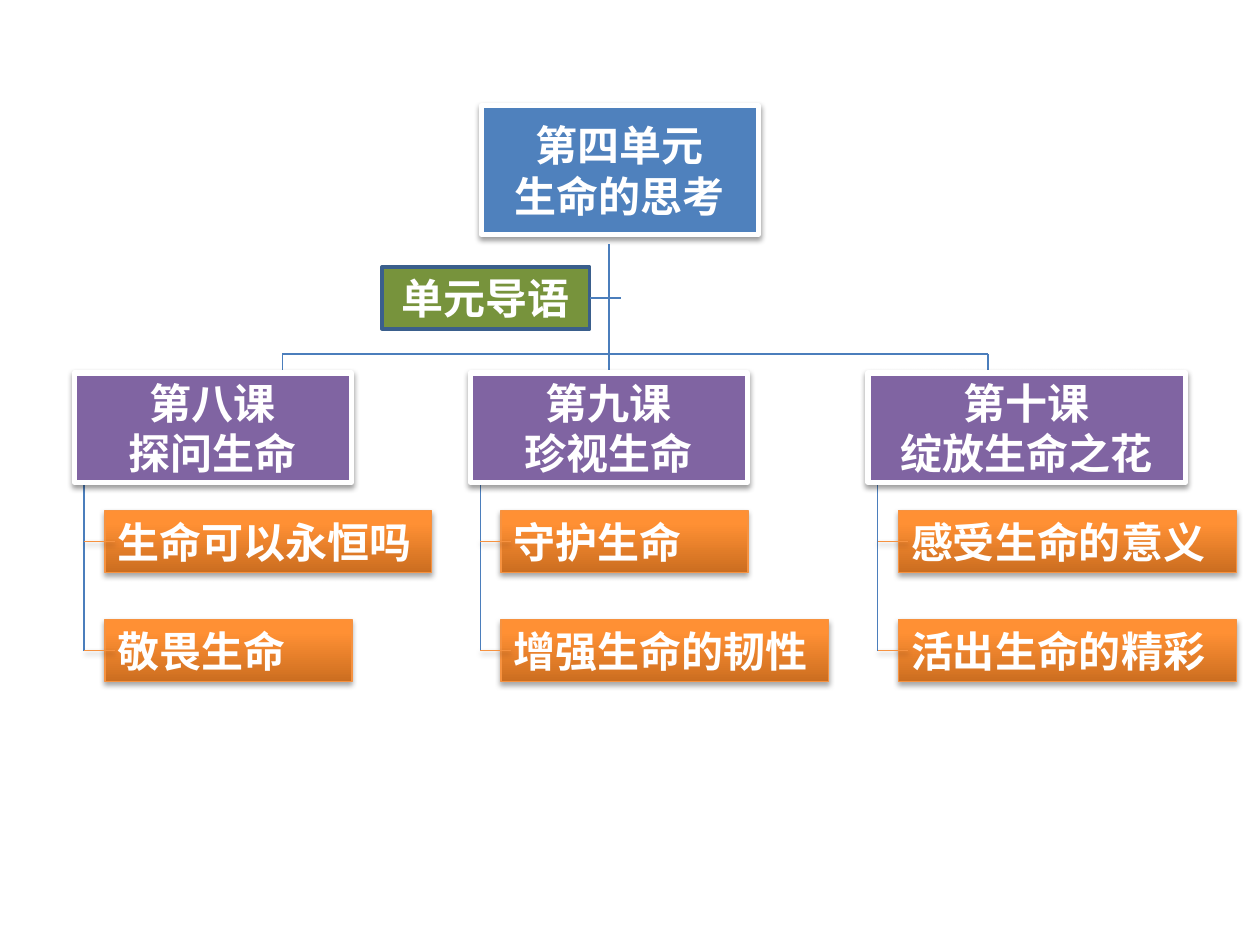
from copy import deepcopy

from lxml.etree import SubElement
from pptx import Presentation
from pptx.dml.color import RGBColor
from pptx.enum.shapes import MSO_CONNECTOR, MSO_SHAPE
from pptx.enum.text import MSO_ANCHOR, PP_ALIGN
from pptx.oxml.ns import qn
from pptx.util import Pt

COLORS = {
    "unit": "4F81BD", "lesson": "8064A2", "intro": "77933C", "intro_edge": "3A5F8C",
    "branch": "4B7EBC", "topic_edge": "F69240", "white": "FFFFFF", "shadow": "000000",
    "topic_low": "CC6E20", "topic_mid": "FF9034", "topic_high": "FF9136",
}
TOPIC_STOPS = [("topic_low", 0), ("topic_mid", 0.8), ("topic_high", 1)]
CARD_SHADOW = (1.6, 38)
TOPIC_SHADOW = (1.8, 35)
LESSONS = [
    (42.5, 158.4, ["第八课", "探问生命"], [("生命可以永恒吗", 186.5), ("敬畏生命", 141.1)]),
    (268.8, 158.4, ["第九课", "珍视生命"], [("守护生命", 141.1), ("增强生命的韧性", 187.2)]),
    (496, 181.4, ["第十课", "绽放生命之花"], [("感受生命的意义", 193), ("活出生命的精彩", 193)]),
]
LESSON_TOP, LESSON_HEIGHT = 213.1, 62.6


def rgb(name):
    """Return the named colour."""
    return RGBColor.from_string(COLORS[name])


def set_effect(element, shadow=None):
    """Give the element a downward shadow, or an empty effect list."""
    effects = SubElement(element.spPr, qn("a:effectLst"))
    if shadow:
        distance, opacity = shadow
        outer = SubElement(effects, qn("a:outerShdw"), blurRad=str(Pt(3.1)),
                           dist=str(Pt(distance)), dir="5400000", rotWithShape="0")
        tone = SubElement(outer, qn("a:srgbClr"), val=COLORS["shadow"])
        SubElement(tone, qn("a:alpha"), val=str(opacity * 1000))


def set_topic_gradient(fill):
    """Fill with the three-stop orange gradient, dark at the bottom."""
    fill.gradient()
    fill.gradient_angle = 90
    stop_list = fill._xPr.find(qn("a:gradFill")).find(qn("a:gsLst"))
    stop_list.insert(1, deepcopy(stop_list[0]))
    for stop, (name, position) in zip(fill.gradient_stops, TOPIC_STOPS):
        stop.color.rgb = rgb(name)
        stop.position = position


def add_card(slide, box, lines, fill, edge, edge_width, shadow=None, align=PP_ALIGN.CENTER):
    """Add a rectangle with bold white lines of text."""
    card = slide.shapes.add_shape(MSO_SHAPE.RECTANGLE, *map(Pt, box))
    if fill == "topic":
        set_topic_gradient(card.fill)
    else:
        card.fill.solid()
        card.fill.fore_color.rgb = rgb(fill)
    card.line.color.rgb = rgb(edge)
    card.line.width = Pt(edge_width)
    set_effect(card._element, shadow)
    frame = card.text_frame
    frame.word_wrap = True
    frame.vertical_anchor = MSO_ANCHOR.MIDDLE
    for index, line in enumerate(lines):
        paragraph = frame.paragraphs[0] if index == 0 else frame.add_paragraph()
        paragraph.alignment = align
        run = paragraph.add_run()
        run.text = line
        run.font.name = "Calibri"
        run.font.size = Pt(24)
        run.font.bold = True
        run.font.color.rgb = rgb("white")
    return card


def add_branch(slide, x1, y1, x2, y2, color="branch", shadow=None):
    """Add a thin straight connector."""
    branch = slide.shapes.add_connector(MSO_CONNECTOR.STRAIGHT, *map(Pt, (x1, y1, x2, y2)))
    branch.line.color.rgb = rgb(color)
    branch.line.width = Pt(0.75)
    set_effect(branch._element, shadow)
    return branch


def add_trunk(slide, left, top, width, height, trunk_x, trunk_top):
    """Add the bar with its end drops and the trunk; return the trunk."""
    right, bottom = left + width, top + height
    add_branch(slide, left, top, right, top)
    for x in (left, right):
        add_branch(slide, x, top, x, bottom)
    return add_branch(slide, trunk_x, trunk_top, trunk_x, bottom)


def add_lesson(slide, left, top, width, height, title, topics):
    """Add a lesson card with its topics hanging on a spine; return the card."""
    spine_x, topic_x, topic_height, pitch = left + 5.6, left + 17.5, 35.3, 62.4
    first_top = top + height + 16
    spine_end = first_top + (len(topics) - 1) * pitch + topic_height / 2
    add_branch(slide, spine_x, top + height, spine_x, spine_end)
    lesson = add_card(slide, (left, top, width, height), title, "lesson", "white", 3, CARD_SHADOW)
    for index, (topic, topic_width) in enumerate(topics):
        topic_top = first_top + index * pitch
        middle = topic_top + topic_height / 2
        add_card(slide, (topic_x, topic_top, topic_width, topic_height), [topic],
                 "topic", "topic_edge", 0.75, TOPIC_SHADOW, PP_ALIGN.LEFT)
        add_branch(slide, spine_x, middle, spine_x + 17.5, middle, "topic_edge", TOPIC_SHADOW)
    return lesson


def add_intro(slide, left, top, width, height):
    """Add the unit introduction card and its link across the trunk."""
    intro = add_card(slide, (left, top, width, height), ["单元导语"], "intro", "intro_edge", 2)
    right, middle = left + width, top + height / 2
    link = add_branch(slide, right, middle, right + 18, middle)
    link.begin_connect(intro, 3)


def main():
    """Build the unit outline slide."""
    presentation = Presentation()
    presentation.slide_width, presentation.slide_height = Pt(720), Pt(540)
    slide = presentation.slides.add_slide(presentation.slide_layouts[6])
    add_card(slide, (275, 60.5, 158.4, 73.4), ["第四单元", "生命的思考"],
             "unit", "white", 3, CARD_SHADOW)
    trunk = add_trunk(slide, 161.3, 202.3, 403.2, LESSON_TOP - 202.3, 348, 139.7)
    lessons = [add_lesson(slide, left, LESSON_TOP, width, LESSON_HEIGHT, title, topics)
               for left, width, title, topics in LESSONS]
    trunk.end_connect(lessons[1], 0)
    add_intro(slide, 218.2, 152.6, 118.8, 35.3)
    presentation.save("out.pptx")


if __name__ == "__main__":
    main()
